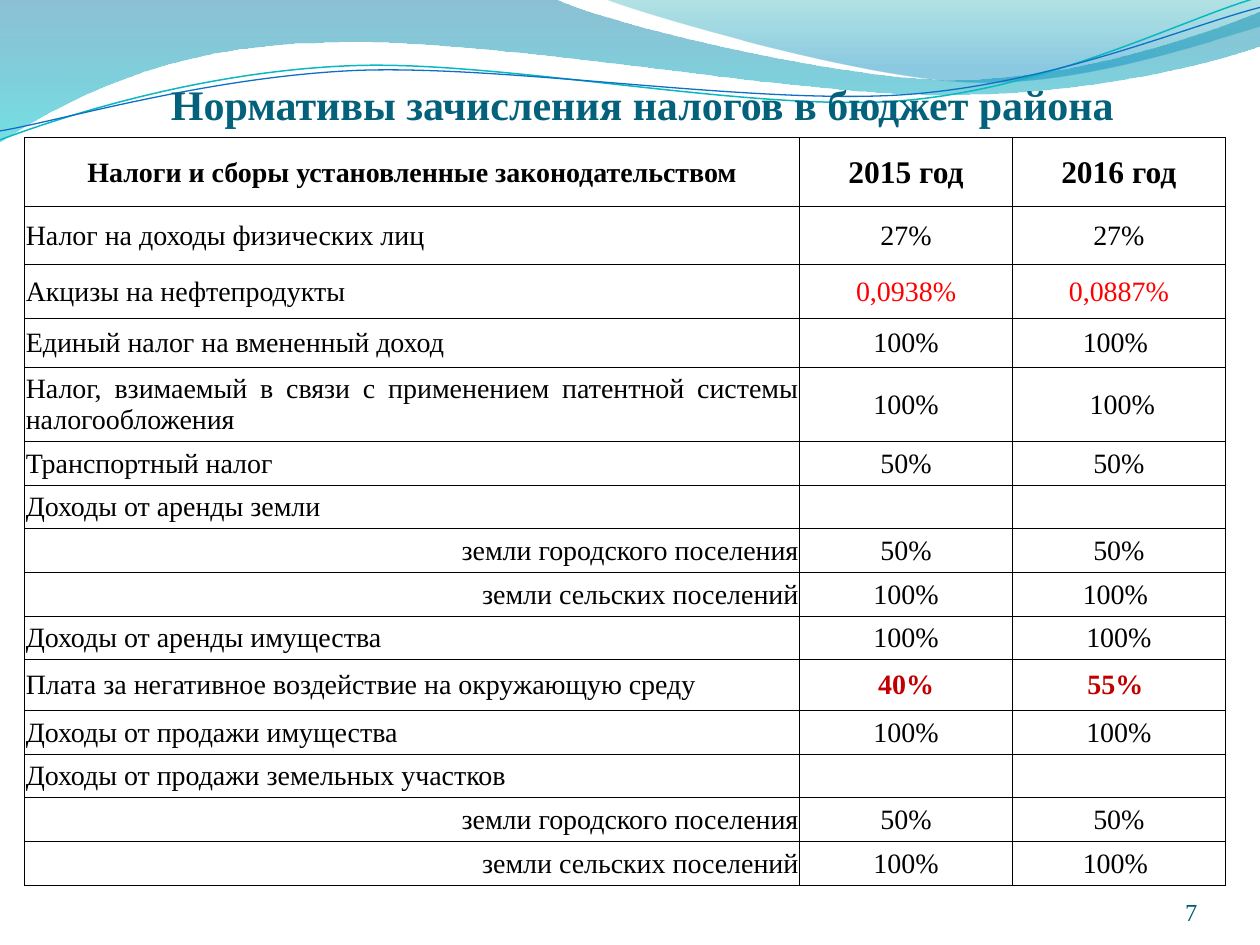
"""Builds a slide with the tax transfer rates of the district budget."""
from lxml.etree import SubElement
from pptx import Presentation
from pptx.dml.color import RGBColor
from pptx.enum.text import MSO_ANCHOR as ANCHOR, PP_ALIGN as ALIGN
from pptx.oxml import parse_xml
from pptx.oxml.ns import nsdecls, qn
from pptx.util import Cm, Pt

FONT = "Times New Roman"
BLACK = RGBColor(0x00, 0x00, 0x00)
RED = RGBColor(0xFF, 0x00, 0x00)
DARK_RED = RGBColor(0xC0, 0x00, 0x00)
TITLE_TEAL = RGBColor(0x04, 0x61, 0x7B)
NUMBER_TEAL = RGBColor(0x04, 0x5D, 0x75)
SEA_BLUE = RGBColor(0x00, 0x74, 0xA1)
CYAN = RGBColor(0x00, 0xC6, 0xCF)
TEAL = RGBColor(0x00, 0xA1, 0xA9)
SKY_BLUE = RGBColor(0x00, 0x8B, 0xBF)
LINE_CYAN = RGBColor(0x0A, 0xB8, 0xBF)
LINE_BLUE = RGBColor(0x0F, 0x6F, 0xC6)

LEFT_WAVE = [
    (0, -0.03), (11.18, -0.03),
    (12.09, 0.43, 16.87, 1.6, 19.25, 1.6),
    (21.67, 1.6, 24.33, 0.66, 25.4, 0.23),
    (25.43, 0.91),
    (24.97, 1.12, 22.1, 1.93, 18.95, 1.91),
    (15.8, 1.91, 9.7, 0.71, 6.53, 0.86),
    (3.28, 0.89, 1.17, 2.11, -0.03, 2.87),
    (0, -0.03),
]
RIGHT_WAVE = [
    (12.17, -0.03),
    (12.93, 0.28, 17.32, 1.57, 19.53, 1.65),
    (21.74, 1.75, 24.41, 0.81, 25.4, 0.53),
    (25.4, 0),
    (12.17, -0.03),
]
CYAN_CURVE = [
    (-0.05, 2.22),
    (1.19, 1.82, 4.02, 1.04, 7.05, 1.06),
    (10.05, 1.07, 15.02, 2.37, 18.08, 2.29),
    (21.13, 2.2, 23.87, 0.91, 25.41, 0.55),
]
BLUE_CURVE = [
    (-0.04, 2.04),
    (1.16, 1.9, 4.18, 1.15, 7.2, 1.16),
    (10.25, 1.19, 15.13, 2.23, 18.18, 2.17),
    (21.21, 2.1, 23.93, 1.06, 25.45, 0.75),
]

COL_WIDTHS = [15.62, 4.29, 4.29]
CITY_LAND = ("земли городского поселения", "50%", "50%", 0.88, ALIGN.RIGHT)
RURAL_LAND = ("земли сельских поселений", "100%", "100% ", 0.88, ALIGN.RIGHT)
TAXES = [
    ("Налог на доходы физических лиц", "27%", "27%", 1.17, ALIGN.JUSTIFY),
    ("Акцизы на нефтепродукты", "0,0938%", "0,0887%", 1.07, ALIGN.JUSTIFY),
    ("Единый налог на вмененный доход", "100%", "100% ", 0.99, ALIGN.JUSTIFY),
    ("Налог, взимаемый в связи с применением патентной системы налогообложения",
     "100%", " 100%", 1.5, ALIGN.JUSTIFY),
    ("Транспортный налог", "50%", "50%", 0.88, ALIGN.JUSTIFY),
    ("Доходы от аренды земли ", "", "", 0.88, ALIGN.JUSTIFY),
    CITY_LAND,
    RURAL_LAND,
    ("Доходы от аренды имущества", "100%", "100%", 0.88, ALIGN.JUSTIFY),
    ("Плата за негативное воздействие на окружающую среду", "40%", "55% ", 1.02, ALIGN.JUSTIFY),
    ("Доходы от продажи имущества", "100%", "100%", 0.88, ALIGN.JUSTIFY),
    ("Доходы от продажи земельных участков", "", "", 0.88, ALIGN.JUSTIFY),
    CITY_LAND,
    RURAL_LAND,
]
RATE_STYLES = {
    "Акцизы на нефтепродукты": (RED, False),
    "Плата за негативное воздействие на окружающую среду": (DARK_RED, True),
}


def add_outline(s, segments, close):
    """Add a freeform of straight and cubic segments without shadow."""
    ends = [(Cm(seg[-2]), Cm(seg[-1])) for seg in segments]
    builder = s.shapes.build_freeform(*ends[0])
    builder.add_line_segments(ends[1:], close=close)
    sp = builder.convert_to_shape()
    sp.shadow.inherit = False
    for step, seg in zip(list(sp.element.iter(qn("a:lnTo"))), segments[1:]):
        if len(seg) == 6:
            step.tag = qn("a:cubicBezTo")
            for i in (0, 1):
                x, y = Cm(seg[2 * i]) - sp.left, Cm(seg[2 * i + 1]) - sp.top
                step.insert(i, parse_xml(f'<a:pt {nsdecls("a")} x="{x}" y="{y}"/>'))
    return sp


def add_wave(s, segments, stops):
    """Add a translucent area with a vertical gradient."""
    sp = add_outline(s, segments, True)
    sp.line.fill.background()
    sp.fill.gradient()
    sp.fill.gradient_angle = 270
    for stop, (position, color, _) in zip(sp.fill.gradient_stops, stops):
        stop.position = position
        stop.color.rgb = color
    for clr, (_, _, opacity) in zip(sp.element.iter(qn("a:srgbClr")), stops):
        SubElement(clr, qn("a:alpha"), val=str(opacity * 1000))


def add_curve(s, segments, color, width):
    """Add a thin, slightly turned open curve."""
    sp = add_outline(s, segments, False)
    sp.rotation = 357.3
    sp.fill.background()
    sp.line.color.rgb = color
    sp.line.width = Pt(width)


def write(p, text, size, color, bold, align):
    """Write one run into a paragraph."""
    p.alignment = align
    p.font.size = Pt(size)
    if text:
        r = p.add_run()
        r.text = text
        r.font.name = FONT
        r.font.size = Pt(size)
        r.font.bold = bold
        r.font.color.rgb = color


def add_text(s, box, text, size, color, bold, align):
    """Add a bottom-anchored text box."""
    tf = s.shapes.add_textbox(*(Cm(v) for v in box)).text_frame
    tf.word_wrap = True
    tf.vertical_anchor = ANCHOR.BOTTOM
    tf.margin_left = tf.margin_right = tf.margin_top = tf.margin_bottom = 0
    write(tf.paragraphs[0], text, size, color, bold, align)


def fill_cell(cell, text, size=16, color=BLACK, bold=False, align=ALIGN.CENTER):
    """Format a bordered table cell and write its text."""
    cell.fill.background()
    cell.vertical_anchor = ANCHOR.MIDDLE
    cell.margin_left = cell.margin_right = cell.margin_top = Cm(0.02)
    cell.margin_bottom = 0
    for i, side in enumerate("LRTB"):
        cell._tc.tcPr.insert(i, parse_xml(
            f'<a:ln{side} {nsdecls("a")} w="{Pt(0.5)}"><a:solidFill>'
            f'<a:srgbClr val="{BLACK}"/></a:solidFill></a:ln{side}>'))
    write(cell.text_frame.paragraphs[0], text, size, color, bold, align)


def add_tax_table(s):
    """Add the table of taxes and their rates by year."""
    heights = [1.4] + [tax[3] for tax in TAXES]
    table = s.shapes.add_table(len(heights), len(COL_WIDTHS), Cm(0.5), Cm(2.77),
                               Cm(sum(COL_WIDTHS)), Cm(sum(heights))).table
    for col, width in zip(table.columns, COL_WIDTHS):
        col.width = Cm(width)
    for row, height in zip(table.rows, heights):
        row.height = Cm(height)
    headings = [("Налоги и сборы установленные законодательством", 16),
                ("2015 год", 18), ("2016 год", 18)]
    for col, (text, size) in enumerate(headings):
        fill_cell(table.cell(0, col), text, size, bold=True)
    for row, (name, *rates, _, align) in enumerate(TAXES, 1):
        fill_cell(table.cell(row, 0), name, align=align)
        color, bold = RATE_STYLES.get(name, (BLACK, False))
        for col, rate in enumerate(rates, 1):
            fill_cell(table.cell(row, col), rate, color=color, bold=bold)


def main():
    """Build and save the slide."""
    prs = Presentation()
    prs.slide_width, prs.slide_height = Cm(25.4), Cm(19.05)
    s = prs.slides.add_slide(prs.slide_layouts[6])
    add_wave(s, LEFT_WAVE, [(0, SEA_BLUE, 45), (1, CYAN, 55)])
    add_wave(s, RIGHT_WAVE, [(0, TEAL, 30), (0.8, SKY_BLUE, 45)])
    add_curve(s, CYAN_CURVE, LINE_CYAN, 0.85)
    add_curve(s, BLUE_CURVE, LINE_BLUE, 0.75)
    add_text(s, (0.5, 1.4, 24.9, 1.19), "Нормативы зачисления налогов в бюджет района",
             24, TITLE_TEAL, True, ALIGN.CENTER)
    add_text(s, (22.02, 17.65, 2.12, 1.02), "7", 14, NUMBER_TEAL, False, ALIGN.RIGHT)
    add_tax_table(s)
    prs.save("out.pptx")


if __name__ == "__main__":
    main()
